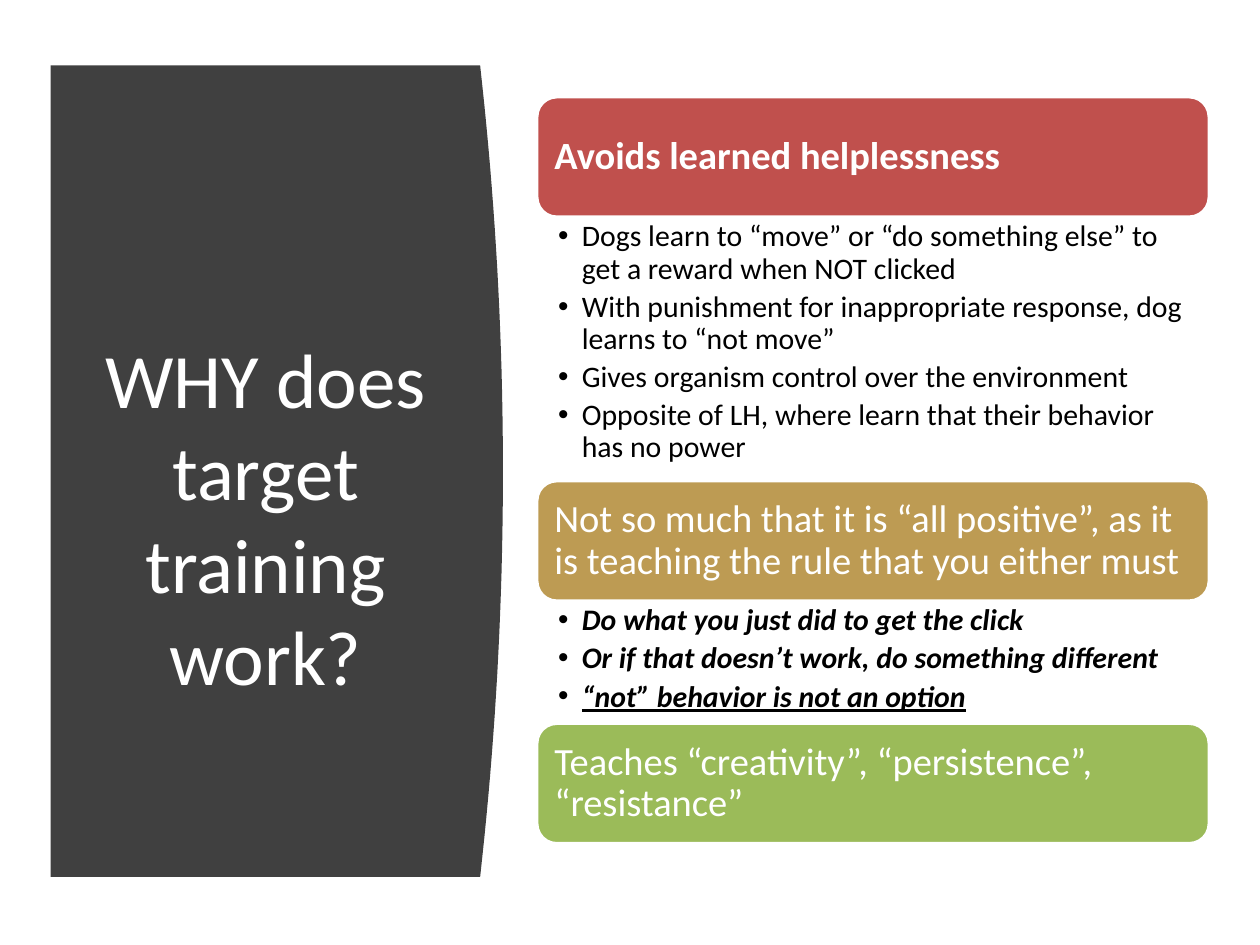
from lxml import etree
from pptx import Presentation
from pptx.dml.color import RGBColor
from pptx.enum import shapes, text
from pptx.oxml import ns
from pptx.util import Cm, Pt

COLORS = {
    "panel": "404040", "red": "C0504D", "gold": "BD9B53",
    "green": "9BBB59", "white": "FFFFFF", "black": "000000",
}


class Deck:
    font = "Calibri"
    left, width = 10.82, 13.56
    heading_height = 2.43

    def __init__(self):
        self.presentation = Presentation()
        self.presentation.slide_width = Cm(25.4)
        self.presentation.slide_height = Cm(19.05)
        self.slide = self.presentation.slides.add_slide(self.presentation.slide_layouts[6])

    def color(self, name):
        return RGBColor.from_string(COLORS[name])

    def style(self, paragraph, size, color, **flags):
        for run in paragraph.runs:
            run.font.name = self.font
            run.font.size = Pt(size)
            run.font.color.rgb = self.color(color)
            for flag, value in flags.items():
                setattr(run.font, flag, value)

    def frame(self, shape, horizontal, vertical, anchor):
        frame = shape.text_frame
        frame.word_wrap = True
        frame.vertical_anchor = anchor
        frame.margin_left = frame.margin_right = Cm(horizontal)
        frame.margin_top = frame.margin_bottom = Cm(vertical)
        return frame

    def curved_panel(self, left, top, right, bottom, bulge, steps=40):
        edge = []
        for step in range(steps + 1):
            t = step / steps
            edge.append((Cm(right + bulge * 4 * t * (1 - t)), Cm(top + (bottom - top) * t)))
        outline = self.slide.shapes.build_freeform(Cm(left), Cm(top))
        outline.add_line_segments(edge + [(Cm(left), Cm(bottom))], close=True)
        panel = outline.convert_to_shape()
        panel.shadow.inherit = False
        panel.fill.solid()
        panel.fill.fore_color.rgb = self.color("panel")
        panel.line.fill.background()

    def title(self, words, left, top, width, height):
        box = self.slide.shapes.add_textbox(Cm(left), Cm(top), Cm(width), Cm(height))
        frame = self.frame(box, 0.25, 0.13, text.MSO_ANCHOR.MIDDLE)
        frame.text = words
        frame.paragraphs[0].alignment = text.PP_ALIGN.CENTER
        self.style(frame.paragraphs[0], 44, "white")

    def heading(self, words, top, fill, bold):
        card = self.slide.shapes.add_shape(
            shapes.MSO_SHAPE.ROUNDED_RECTANGLE,
            Cm(self.left), Cm(top), Cm(self.width), Cm(self.heading_height))
        card.shadow.inherit = False
        card.fill.solid()
        card.fill.fore_color.rgb = self.color(fill)
        card.line.color.rgb = self.color("white")
        card.line.width = Pt(2)
        frame = self.frame(card, 0.24, 0.24, text.MSO_ANCHOR.MIDDLE)
        frame.text = words
        paragraph = frame.paragraphs[0]
        paragraph.alignment = text.PP_ALIGN.LEFT
        paragraph.line_spacing = 0.9
        self.style(paragraph, 22, "white", bold=bold)

    def bullets(self, points, top, height, **flags):
        box = self.slide.shapes.add_textbox(
            Cm(self.left), Cm(top), Cm(self.width), Cm(height))
        frame = self.frame(box, 0.43, 0.08, text.MSO_ANCHOR.TOP)
        frame.text = "\n".join(points)
        for paragraph in frame.paragraphs:
            paragraph.line_spacing = 0.9
            paragraph.space_after = Pt(3.4)
            self.style(paragraph, 17, "black", **flags)
            properties = paragraph._p.get_or_add_pPr()
            properties.set("marL", str(Cm(0.48)))
            properties.set("indent", str(-Cm(0.48)))
            etree.SubElement(properties, ns.qn("a:buFont")).set("typeface", "Arial")
            etree.SubElement(properties, ns.qn("a:buChar")).set("char", "•")
        return frame.paragraphs


deck = Deck()
deck.curved_panel(1.02, 1.32, 9.68, 17.68, 0.46)
deck.title("WHY does target training work?", 1.8, 4.68, 7.11, 11.45)

sections = [
    ("Avoids learned helplessness", "red", True, 5.31, {}, [
        "Dogs learn to “move” or “do something else” to get a reward when NOT clicked",
        "With punishment for inappropriate response, dog learns to “not move”",
        "Gives organism control over the environment",
        "Opposite of LH, where learn that their behavior has no power",
    ]),
    ("Not so much that it is “all positive”, as it is teaching the rule that you either must",
     "gold", False, 2.46, {"bold": True, "italic": True}, [
         "Do what you just did to get the click",
         "Or if that doesn’t work, do something different",
         "“not” behavior is not an option",
     ]),
    ("Teaches “creativity”, “persistence”, “resistance”", "green", False, 0, {}, []),
]

top = 1.95
for heading, fill, bold, list_height, flags, points in sections:
    deck.heading(heading, top, fill, bold)
    top += deck.heading_height
    if points:
        rules = deck.bullets(points, top, list_height, **flags)
        top += list_height

rules[-1].runs[0].font.underline = True
deck.presentation.save("out.pptx")
